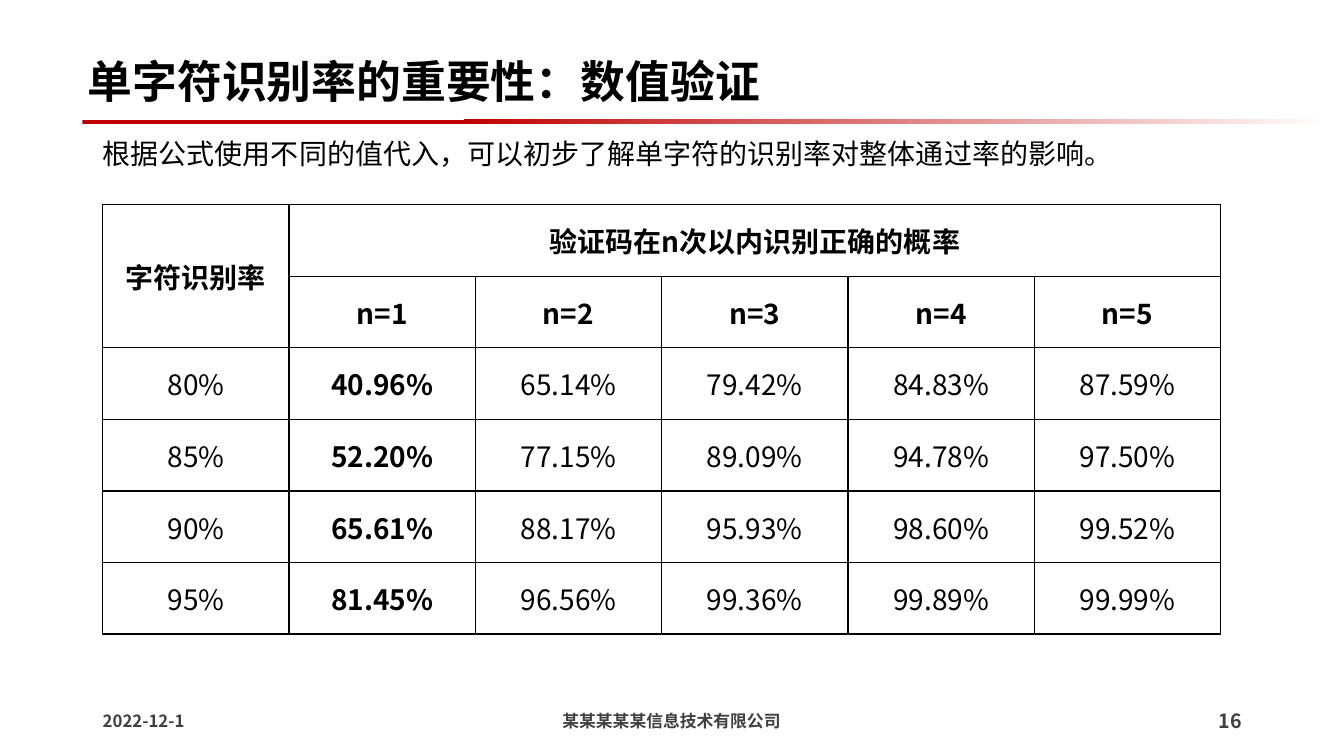
import pptx
import pptx.dml.color
import pptx.enum.shapes
import pptx.enum.text
import pptx.oxml
import pptx.oxml.ns
import pptx.util

Cm = pptx.util.Cm
Pt = pptx.util.Pt
ALIGN = pptx.enum.text.PP_ALIGN
ANCHOR = pptx.enum.text.MSO_ANCHOR
FONT = "Noto Sans CJK SC"
NS = pptx.oxml.ns.nsdecls("a")

HEADS = ["n=1", "n=2", "n=3", "n=4", "n=5"]
RATES = [
    ["80%", "40.96%", "65.14%", "79.42%", "84.83%", "87.59%"],
    ["85%", "52.20%", "77.15%", "89.09%", "94.78%", "97.50%"],
    ["90%", "65.61%", "88.17%", "95.93%", "98.60%", "99.52%"],
    ["95%", "81.45%", "96.56%", "99.36%", "99.89%", "99.99%"],
]


def color(hex_string):
    return pptx.dml.color.RGBColor.from_string(hex_string)


def write(tf, text, size, bold=False, hex_string="000000", align=ALIGN.LEFT):
    p = tf.paragraphs[0]
    p.alignment = align
    r = p.add_run()
    r.text = text
    r.font.size = Pt(size)
    r.font.bold = bold
    r.font.name = FONT
    r.font.color.rgb = color(hex_string)
    r.font._element.append(pptx.oxml.parse_xml(f'<a:ea {NS} typeface="{FONT}"/>'))
    return p


def add_text(s, box, text, size, anchor=ANCHOR.MIDDLE, **style):
    tf = s.shapes.add_textbox(*map(Cm, box)).text_frame
    tf.word_wrap = True
    tf.vertical_anchor = anchor
    return write(tf, text, size, **style)


def add_header(s, left, top, width):
    # Title
    p = add_text(s, (left, top, width, 2.26), "单字符识别率的重要性：数值验证", 32, bold=True)
    p.line_spacing = 0.9
    # Fading rule under the title
    sp = s.shapes.add_shape(pptx.enum.shapes.MSO_SHAPE.RECTANGLE,
                            Cm(left + 0.12), Cm(top + 2.03), Cm(31.5), Cm(0.1))
    sp.shadow.inherit = False
    sp.line.fill.background()
    sp.fill.gradient()
    sp.fill.gradient_angle = 3
    for stop, (position, hex_string) in zip(sp.fill.gradient_stops,
                                            [(0.3, "C00000"), (1, "FFFFFF")]):
        stop.position = position
        stop.color.rgb = color(hex_string)


def fill_cell(cell, text, bold):
    tcPr = cell._tc.get_or_add_tcPr()
    for side in ("lnL", "lnR", "lnT", "lnB"):
        tcPr.append(pptx.oxml.parse_xml(
            f'<a:{side} {NS} w="12700"><a:solidFill><a:srgbClr val="000000"/>'
            f'</a:solidFill></a:{side}>'))
    cell.fill.background()
    cell.vertical_anchor = ANCHOR.MIDDLE
    if text:
        write(cell.text_frame, text, 20, bold, align=ALIGN.CENTER)


def add_rate_table(s, left, top, width, height):
    rows = [["字符识别率", "验证码在n次以内识别正确的概率"] + [""] * 4, [""] + HEADS] + RATES
    table = s.shapes.add_table(len(rows), len(rows[0]), Cm(left), Cm(top),
                               Cm(width), Cm(height)).table
    table.first_row = False
    table.horz_banding = False
    # Both header rows and the n=1 column are bold
    for i, row in enumerate(rows):
        for j, text in enumerate(row):
            fill_cell(table.cell(i, j), text, bold=i < 2 or j == 1)
    table.cell(0, 0).merge(table.cell(1, 0))
    table.cell(0, 1).merge(table.cell(0, 5))


def add_footer(s, left, top, width, height):
    style = {"bold": True, "hex_string": "404040"}
    add_text(s, (left, top, 3.07, height), "2022-12-1", 12, **style)
    add_text(s, (left + 11.12, top, 6.93, height), "某某某某某信息技术有限公司", 12,
             align=ALIGN.CENTER, **style)
    add_text(s, (left + width - 2.34, top, 2.34, height), "16", 14,
             align=ALIGN.RIGHT, **style)


def main():
    prs = pptx.Presentation()
    prs.slide_width, prs.slide_height = Cm(33.87), Cm(19.05)
    s = prs.slides.add_slide(prs.slide_layouts[6])
    add_header(s, 1.96, 0.99, 29.18)
    # Lead sentence
    p = add_text(s, (2.34, 3.4, 29.18, 1.98),
                 "根据公式使用不同的值代入，可以初步了解单字符的识别率对整体通过率的影响。",
                 20, anchor=ANCHOR.TOP)
    p.line_spacing = 0.9
    add_rate_table(s, 2.59, 5.16, 28.17, 10.82)
    add_footer(s, 2.34, 17.65, 29.21, 1.02)
    prs.save("out.pptx")


if __name__ == "__main__":
    main()
